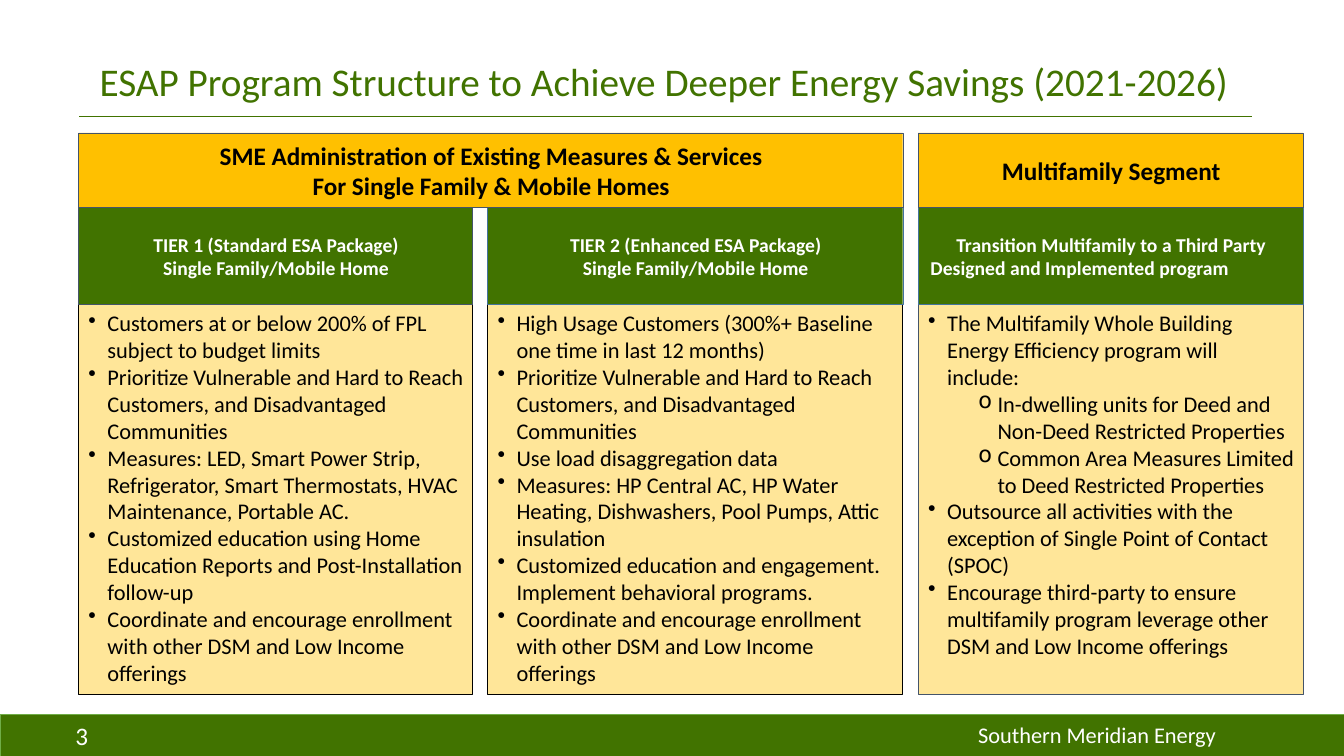
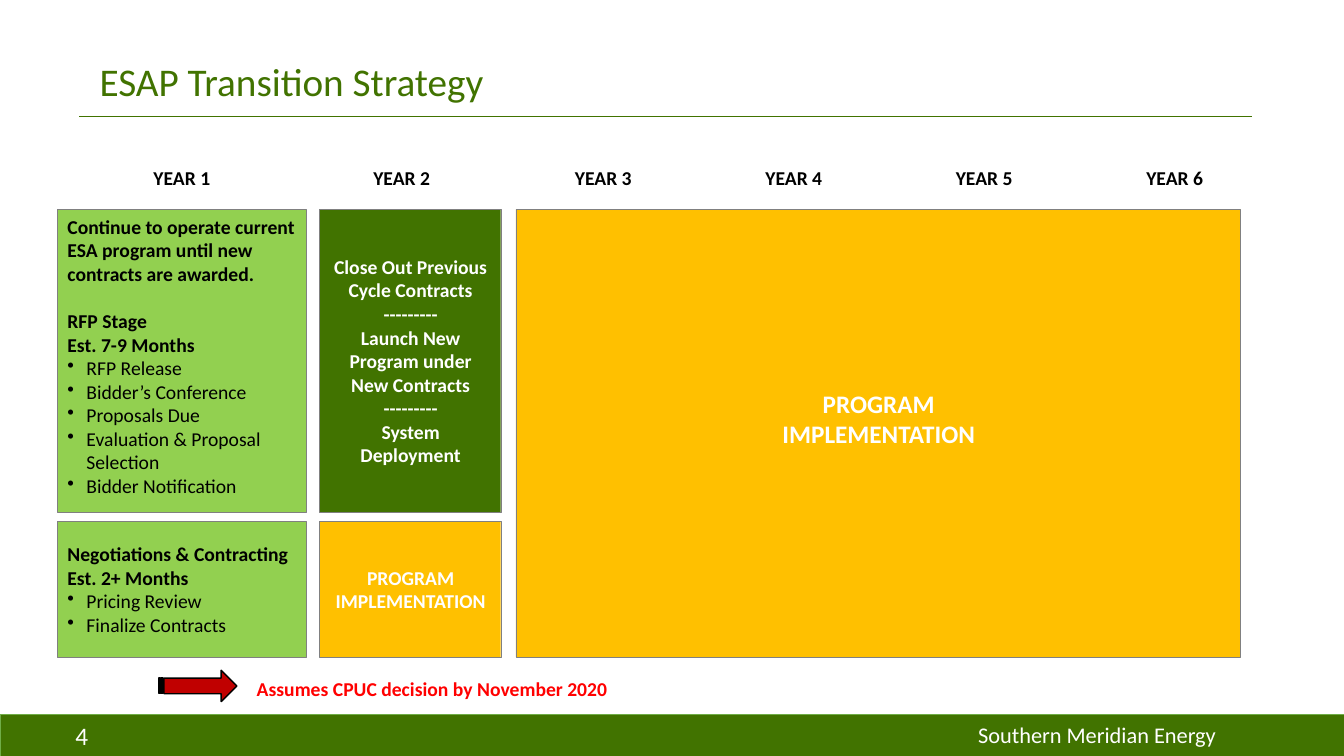
"""Build two slides on the structure and the transition of the ESAP program."""
from dataclasses import dataclass

from lxml import etree
from pptx import Presentation
from pptx import util as u
from pptx.dml.color import RGBColor
from pptx.enum import shapes, text
from pptx.oxml.ns import qn

HUES = {
    "green": "417300", "edge": "70AD47", "cream": "FFE699", "gold": "FFC000",
    "lime": "92D050", "slate": "44546A", "blue": "43739E", "gray": "808080",
    "black": "000000", "white": "FFFFFF", "brick": "C00000", "red": "FF0000",
}
FONT = "Calibri"
WIDE, HIGH = 33.87, 19.05
HANG = 0.48
LEFT, MID = text.PP_ALIGN.LEFT, text.PP_ALIGN.CENTER
TOP, HALF = text.MSO_ANCHOR.TOP, text.MSO_ANCHOR.MIDDLE
RECT, PLATE = shapes.MSO_SHAPE.RECTANGLE, shapes.MSO_SHAPE.PENTAGON
ARROW = shapes.MSO_SHAPE.STRIPED_RIGHT_ARROW


@dataclass(frozen=True)
class Para:
    words: str
    mark: str = ""
    dent: float = 0
    bold: bool | None = None
    lead: float = 0
    align: text.PP_ALIGN | None = None


@dataclass(frozen=True)
class Look:
    kind: shapes.MSO_SHAPE | None = None
    fill: str = "white"
    line: str = ""
    thick: float = 0.25
    ink: str = "black"
    size: float = 14
    bold: bool = False
    align: text.PP_ALIGN = LEFT
    anchor: text.MSO_ANCHOR = TOP
    pitch: float = 1.0
    foot: float = 0.13


@dataclass(frozen=True)
class Box:
    x: float
    y: float
    w: float
    h: float
    look: Look
    paras: tuple[Para, ...] = ()


@dataclass(frozen=True)
class Tier:
    x: float
    w: float
    rim: str
    edge: str
    head: tuple[Para, ...]
    body: tuple[Para, ...]


def plain(*lines: str) -> tuple[Para, ...]:
    return tuple(Para(line) for line in lines)


def list_of(*lines: str) -> tuple[Para, ...]:
    return tuple(Para(line, "•", HANG, False) for line in lines)


def sub_list(*lines: str) -> tuple[Para, ...]:
    return tuple(Para(line, "o", 1.75, False) for line in lines)


TITLE = Look(ink="green", size=28, anchor=HALF, pitch=0.9)
BAND = Look(RECT, "green", "edge", 0.5)
PAGE = Look(ink="white", size=18)
OWNER = Look(ink="white", size=16)
YEAR = Look(bold=True, align=MID)
NOTE = Look(ink="red", bold=True)
POINT = Look(ARROW, "brick", "black", 1)


def block(fill: str, ink: str = "white", **more) -> Look:
    base = {"line": "gray", "bold": True, "align": MID, "anchor": HALF}
    return Look(RECT, fill, ink=ink, **{**base, **more})


def plate(fill: str, line: str, ink: str, size: float) -> Look:
    return Look(PLATE, fill, line, ink=ink, size=size, bold=True,
                align=MID, anchor=HALF)


SHARED = "Coordinate and encourage enrollment with other DSM and Low Income offerings"
NEEDS = "Prioritize Vulnerable and Hard to Reach Customers, and Disadvantaged Communities"
HOME = "Single Family/Mobile Home"
TIERS = (
    Tier(1.98, 9.93, "slate", "black", plain("TIER 1 (Standard ESA Package)", HOME), list_of(
        "Customers at or below 200% of FPL subject to budget limits",
        NEEDS,
        "Measures: LED, Smart Power Strip, Refrigerator, Smart Thermostats, HVAC Maintenance, Portable AC.",
        "Customized education using Home Education Reports and Post-Installation follow-up",
        SHARED)),
    Tier(12.29, 10.46, "blue", "black", plain("TIER 2 (Enhanced ESA Package)", HOME), list_of(
        "High Usage Customers (300%+ Baseline one time in last 12 months)",
        NEEDS,
        "Use load disaggregation data",
        "Measures: HP Central AC, HP Water Heating, Dishwashers, Pool Pumps, Attic insulation",
        "Customized education and engagement. Implement behavioral programs.",
        SHARED)),
    Tier(23.14, 9.7, "blue", "slate",
         (Para("Transition Multifamily to a Third Party"),
          Para("Designed and Implemented program", dent=0.06, align=LEFT)),
         list_of("The Multifamily Whole Building Energy Efficiency program will include:")
         + sub_list("In-dwelling units for Deed and Non-Deed Restricted Properties",
                    "Common Area Measures Limited to Deed Restricted Properties")
         + list_of("Outsource all activities with the exception of Single Point of Contact (SPOC)",
                   "Encourage third-party to ensure multifamily program leverage other DSM and Low Income offerings")),
)


def tint(name: str) -> RGBColor:
    return RGBColor.from_string(HUES[name])


def apply(target, **vals) -> None:
    for key, val in vals.items():
        setattr(target, key, val)


def write(frame, look: Look, paras: tuple[Para, ...]) -> None:
    apply(frame, word_wrap=True, vertical_anchor=look.anchor,
          margin_left=u.Cm(0.25), margin_right=u.Cm(0.22),
          margin_top=u.Cm(0.13), margin_bottom=u.Cm(look.foot))
    for i, para in enumerate(paras):
        line = frame.add_paragraph() if i else frame.paragraphs[0]
        apply(line, alignment=look.align if para.align is None else para.align,
              line_spacing=look.pitch, space_before=u.Pt(para.lead))
        props = line._p.get_or_add_pPr()
        props.set("marL", str(int(u.Cm(para.dent))))
        if para.mark:
            props.set("indent", str(-int(u.Cm(HANG))))
            etree.SubElement(props, qn("a:buChar")).set("char", para.mark)
        run = line.add_run()
        run.text = para.words
        apply(run.font, name=FONT, size=u.Pt(look.size),
              bold=look.bold if para.bold is None else para.bold)
        run.font.color.rgb = tint(look.ink)


def draw(slide, box: Box) -> None:
    look = box.look
    place = [u.Cm(side) for side in (box.x, box.y, box.w, box.h)]
    if look.kind is None:
        shape = slide.shapes.add_textbox(*place)
    else:
        shape = slide.shapes.add_shape(look.kind, *place)
        shape.shadow.inherit = False
        shape.fill.solid()
        shape.fill.fore_color.rgb = tint(look.fill)
        shape.line.color.rgb = tint(look.line)
        shape.line.width = u.Pt(look.thick)
        if look.kind == PLATE:
            shape.adjustments[0] = 0
    if box.paras:
        write(shape.text_frame, look, box.paras)


def rule(slide) -> None:
    line = slide.shapes.add_connector(
        shapes.MSO_CONNECTOR.STRAIGHT, u.Cm(2), u.Cm(2.93), u.Cm(31.55), u.Cm(2.93))
    line.line.color.rgb = tint("green")
    line.line.width = u.Pt(1)
    etree.SubElement(line._element.spPr, qn("a:effectLst"))


def start(deck, title: str, page: int):
    slide = deck.slides.add_slide(deck.slide_layouts[6])
    for box in (
        Box(0, 18, WIDE, 1.05, BAND),
        Box(1.65, 18.03, 2.11, 1.02, PAGE, plain(str(page))),
        Box(24.4, 18.03, 9.45, 1.02, OWNER, plain("Southern Meridian Energy")),
        Box(2.26, 0.28, 30.5, 3.68, TITLE, plain(title)),
    ):
        draw(slide, box)
    rule(slide)
    return slide


def tiers(deck) -> None:
    slide = start(deck, "ESAP Program Structure to Achieve Deeper Energy Savings (2021-2026)", 3)
    crown, head, body, end = 3.35, 5.23, 7.67, 17.5
    for tier in TIERS:
        draw(slide, Box(tier.x, body, tier.w, end - body,
                        Look(RECT, "cream", tier.edge, size=16), tier.body))
        draw(slide, Box(tier.x, head, tier.w, body - head,
                        plate("green", tier.rim, "white", 14), tier.head))
    first, second, third = TIERS
    gold = plate("gold", "slate", "black", 18)
    draw(slide, Box(first.x, crown, second.x + second.w - first.x, head - crown, gold,
                    plain("SME Administration of Existing Measures & Services",
                          "For Single Family & Mobile Homes")))
    draw(slide, Box(third.x, crown, third.w, head - crown, gold,
                    plain("Multifamily Segment")))


def years(deck) -> None:
    slide = start(deck, "ESAP Transition Strategy", 4)
    spots = [2.92, 8.46] + [13.54 + 4.8 * i for i in range(4)]
    for i, x in enumerate(spots, 1):
        draw(slide, Box(x, 4.06, 3.3, 0.86, YEAR, plain(f"YEAR {i}")))
    upper, lower, tall, short = 5.28, 13.13, 7.62, 3.43
    goal = plain("PROGRAM", "IMPLEMENTATION")
    for box in (
        Box(1.45, upper, 6.26, tall, block("lime", "black", align=LEFT, anchor=TOP),
            (Para("Continue to operate current ESA program until new contracts are awarded."),
             Para("RFP Stage", lead=17), Para("Est. 7-9 Months"))
            + list_of("RFP Release", "Bidder’s Conference", "Proposals Due",
                      "Evaluation & Proposal Selection", "Bidder Notification")),
        Box(1.45, lower, 6.26, short, block("lime", "black", align=LEFT),
            plain("Negotiations & Contracting", "Est. 2+ Months")
            + list_of("Pricing Review", "Finalize Contracts")),
        Box(8.05, upper, 4.57, tall, block("green"),
            plain("Close Out Previous Cycle Contracts", "---------",
                  "Launch New Program under New Contracts", "---------",
                  "System Deployment")),
        Box(8.05, lower, 4.57, short, block("gold"), goal),
        Box(13, upper, 18.26, lower + short - upper,
            block("gold", size=18, foot=0.87), goal),
        Box(4.01, 16.89, 1.96, 0.79, POINT),
        Box(6.22, 16.92, 11.71, 0.86, NOTE,
            plain("Assumes CPUC decision by November 2020")),
    ):
        draw(slide, box)


def main() -> None:
    deck = Presentation()
    apply(deck, slide_width=u.Cm(WIDE), slide_height=u.Cm(HIGH))
    tiers(deck)
    years(deck)
    deck.save("out.pptx")


if __name__ == "__main__":
    main()
